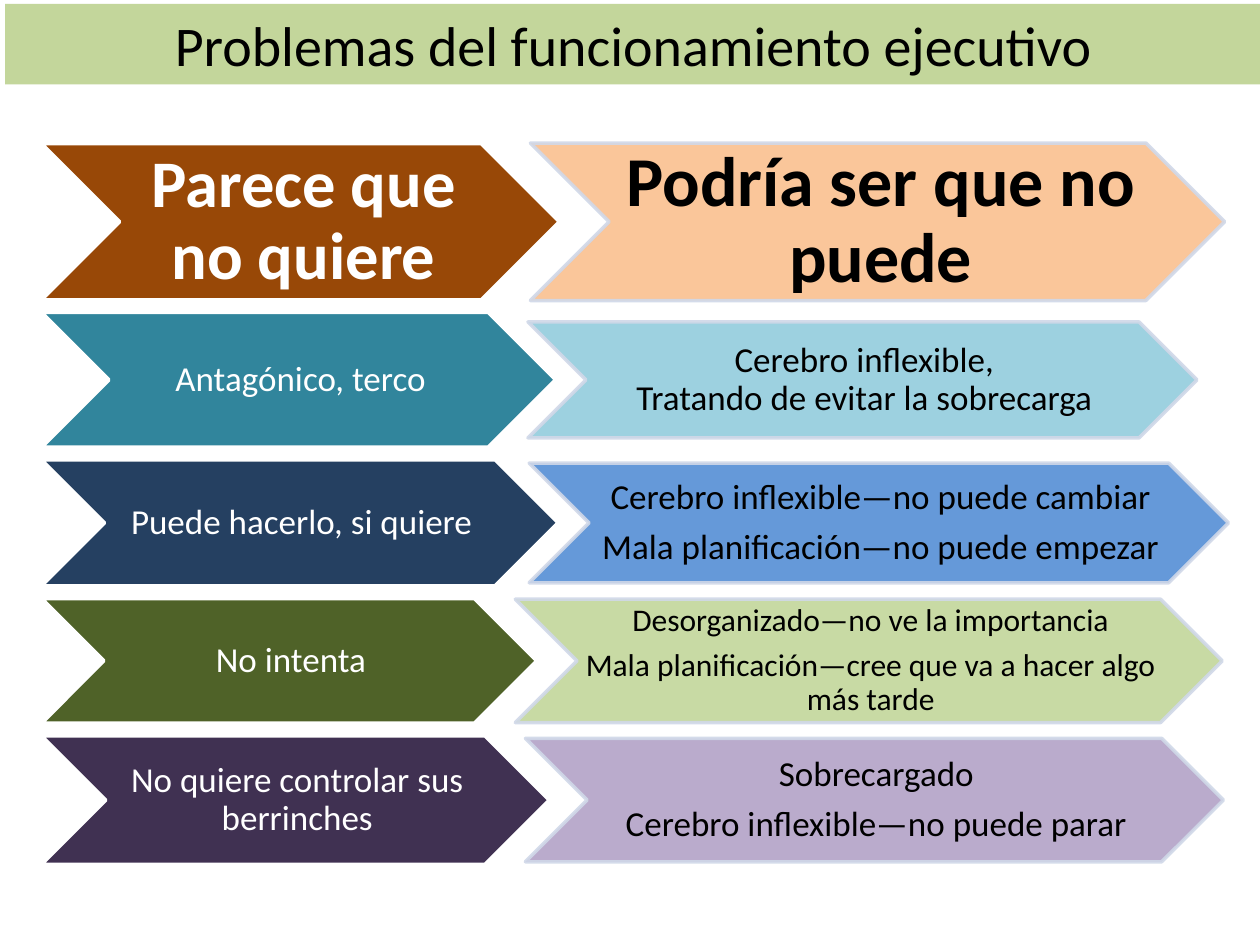
from lxml import etree
from pptx import Presentation
from pptx.dml.color import RGBColor
from pptx.enum.shapes import MSO_SHAPE
from pptx.enum.text import MSO_ANCHOR, MSO_AUTO_SIZE, PP_ALIGN
from pptx.oxml.ns import qn
from pptx.util import Inches, Pt

CHEVRON = MSO_SHAPE.CHEVRON
MIDDLE = MSO_ANCHOR.MIDDLE
NO_FIT = MSO_AUTO_SIZE.NONE
CENTER = PP_ALIGN.CENTER

LEFT, TOP, GAP = 0.33, 1.14, 0.1
SPACE = 0.35  # paragraph gap as a share of the text size


def paint(fill, color, alpha=None):
    """Give a fill a solid hex colour, with opacity in percent if wanted."""
    fill.solid()
    fill.fore_color.rgb = RGBColor.from_string(color)
    if alpha:
        tint = fill._xPr.find(qn("a:solidFill"))[0]
        etree.SubElement(tint, qn("a:alpha")).set("val", str(alpha * 1000))


def write(shape, lines, size, color, bold=False, gap=0, pitch=1.0):
    frame = shape.text_frame
    frame.text = "\n".join(lines)
    look = {"word_wrap": True, "auto_size": NO_FIT, "vertical_anchor": MIDDLE}
    for key, value in look.items():
        setattr(frame, key, value)
    for i, para in enumerate(frame.paragraphs):
        para.alignment = CENTER
        para.line_spacing = pitch
        para.space_before = Pt(gap * size if i else 0)
        font = para.runs[0].font
        look = {"name": "Calibri", "size": Pt(size), "bold": bold}
        for key, value in look.items():
            setattr(font, key, value)
        font.color.rgb = RGBColor.from_string(color)


prs = Presentation()
prs.slide_width, prs.slide_height = Inches(10), Inches(7.5)
slide = prs.slides.add_slide(prs.slide_layouts[5])

title = slide.shapes.title
place = {"left": 0.04, "top": 0.03, "width": 9.98, "height": 0.64}
for key, value in place.items():
    setattr(title, key, Inches(value))
paint(title.fill, "C3D69B")
write(title, ["Problemas del funcionamiento ejecutivo"], 32, "000000")

# Each side: width, height, fill, text size, lines; the right adds left and gap
rows = [
    ((4.11, 1.24, "984807", 38, ["Parece que no quiere"]),
     (5.51, 1.25, "FAC090", 40, ["Podría ser que no puede"]), 4.21, SPACE),
    ((4.08, 1.07, "31859C", 20, ["Antagónico, terco"]),
     (5.31, 0.92, "93CDDD", 20,
      ["Cerebro inflexible,", "Tratando de evitar la sobrecarga"]), 4.19, 0),
    ((4.1, 1, "254061", 20, ["Puede hacerlo, si quiere"]),
     (5.55, 0.95, "558ED5", 20,
      ["Cerebro inflexible—no puede cambiar",
       "Mala planificación—no puede empezar"]), 4.2, SPACE),
    ((3.93, 0.99, "4F6228", 20, ["No intenta"]),
     (5.61, 0.98, "C3D69B", 18,
      ["Desorganizado—no ve la importancia",
       "Mala planificación—cree que va a hacer algo más tarde"]), 4.09, SPACE),
    ((4.03, 1.02, "403152", 20, ["No quiere controlar sus berrinches"]),
     (5.54, 0.98, "B3A2C7", 20,
      ["Sobrecargado", "Cerebro inflexible—no puede parar"]), 4.17, SPACE),
]

top = TOP
for row, (seems, maybe, start, gap) in enumerate(rows):
    mid = top + seems[1] / 2
    sides = [(seems, LEFT, "FFFFFF", "FFFFFF", None),
             (maybe, start, "000000", "D0D8E8", 90)]
    for (width, height, color, size, lines), left, ink, edge, alpha in sides:
        arrow = slide.shapes.add_shape(
            CHEVRON, Inches(left), Inches(mid - height / 2),
            Inches(width), Inches(height))
        arrow.shadow.inherit = False
        paint(arrow.fill, color, alpha)
        paint(arrow.line.fill, edge, alpha)
        arrow.line.width = Pt(2)
        head = row == 0
        pad = 0.03 if head else 0.01
        inset = {"left": 0.05 if head else 0.03, "top": pad,
                 "right": 0, "bottom": pad}
        for key, value in inset.items():
            setattr(arrow.text_frame, f"margin_{key}", Inches(value))
        write(arrow, lines, size, ink, head, gap, 0.9)
    top += seems[1] + GAP

prs.save("out.pptx")
